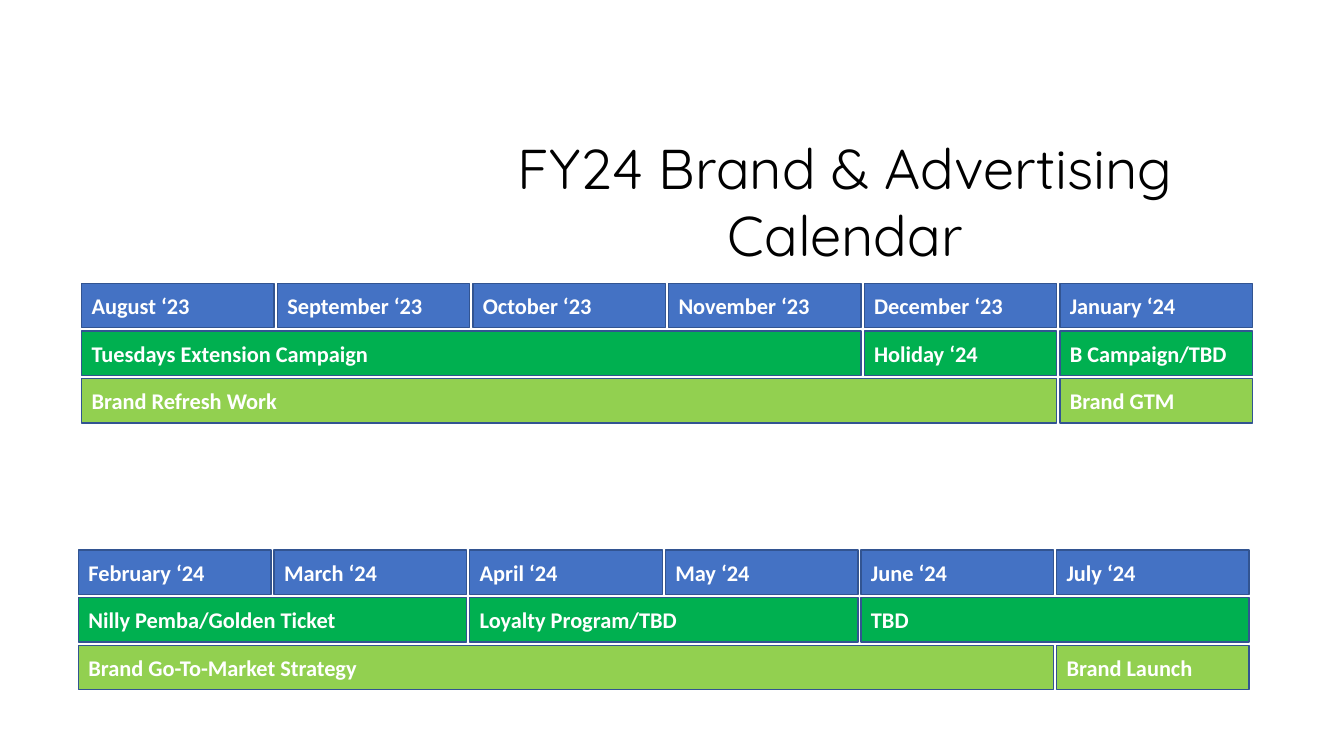
from pptx import Presentation
from pptx.dml.color import RGBColor
from pptx.enum.shapes import MSO_SHAPE
from pptx.enum.text import MSO_ANCHOR, MSO_AUTO_SIZE, PP_ALIGN
from pptx.util import Cm, Pt

RECTANGLE = MSO_SHAPE.RECTANGLE
TOP, MIDDLE = MSO_ANCHOR.TOP, MSO_ANCHOR.MIDDLE
LEFT, CENTER = PP_ALIGN.LEFT, PP_ALIGN.CENTER
NO_AUTO_SIZE = MSO_AUTO_SIZE.NONE

COLORS = {
    "month": "4472C4",
    "campaign": "00B050",
    "brand": "92D050",
    "outline": "325491",
    "light": "FFFFFF",
    "dark": "000000",
}
MONTH_PITCH, ROW_PITCH = 4.93, 1.2
GAP, BAR_HEIGHT = 0.08, 1.12

HALF_YEARS = [
    (2.06, 7.14, [
        ("month", [("August ‘23", 1), ("September ‘23", 1), ("October ‘23", 1),
                   ("November ‘23", 1), ("December ‘23", 1), ("January ‘24", 1)]),
        ("campaign", [("Tuesdays Extension Campaign", 4), ("Holiday ‘24", 1),
                      ("B Campaign/TBD", 1)]),
        ("brand", [("Brand Refresh Work", 5), ("Brand GTM", 1)]),
    ]),
    (1.98, 13.86, [
        ("month", [("February ‘24", 1), ("March ‘24", 1), ("April ‘24", 1),
                   ("May ‘24", 1), ("June ‘24", 1), ("July ‘24", 1)]),
        ("campaign", [("Nilly Pemba/Golden Ticket", 2), ("Loyalty Program/TBD", 2),
                      ("TBD", 2)]),
        ("brand", [("Brand Go-To-Market Strategy", 5), ("Brand Launch", 1)]),
    ]),
]


def write_text(shape, text, *, font, size, color, bold=False, align=LEFT, anchor=MIDDLE):
    frame = shape.text_frame
    frame.text = text
    frame.word_wrap = True
    frame.auto_size = NO_AUTO_SIZE
    frame.vertical_anchor = anchor
    paragraph = frame.paragraphs[0]
    paragraph.alignment = align
    paragraph.line_spacing = 1.0
    paragraph.font.name = font
    paragraph.font.size = Pt(size)
    paragraph.font.bold = bold
    paragraph.font.color.rgb = RGBColor.from_string(COLORS[color])


class CalendarSlide:
    """Draws the calendar elements on one slide in a shared style."""

    def __init__(self, presentation):
        self.title_font = "Quicksand"
        self.bar_font = "Calibri"
        self.slide = presentation.slides.add_slide(presentation.slide_layouts[5])

    def add_title(self, text):
        title = self.slide.shapes.title
        title.left, title.top = Cm(10.67), Cm(3.23)
        title.width, title.height = Cm(21.26), Cm(3.65)
        write_text(title, text, font=self.title_font, size=40, color="dark",
                   align=CENTER, anchor=TOP)

    def add_bar(self, text, left, top, months, fill):
        bar = self.slide.shapes.add_shape(
            RECTANGLE, Cm(left), Cm(top), Cm(months * MONTH_PITCH - GAP), Cm(BAR_HEIGHT))
        bar.shadow.inherit = False
        bar.fill.solid()
        bar.fill.fore_color.rgb = RGBColor.from_string(COLORS[fill])
        bar.line.color.rgb = RGBColor.from_string(COLORS["outline"])
        bar.line.width = Pt(1)
        write_text(bar, text, font=self.bar_font, size=16, color="light", bold=True)

    def add_half_year(self, left, top, rows):
        for row, (fill, bars) in enumerate(rows):
            first_month = 0
            for text, months in bars:
                self.add_bar(text, left + first_month * MONTH_PITCH,
                             top + row * ROW_PITCH, months, fill)
                first_month += months


def main():
    presentation = Presentation()
    presentation.slide_width, presentation.slide_height = Cm(33.87), Cm(19.05)
    calendar = CalendarSlide(presentation)
    calendar.add_title("FY24 Brand & Advertising Calendar")
    for left, top, rows in HALF_YEARS:
        calendar.add_half_year(left, top, rows)
    presentation.save("out.pptx")


if __name__ == "__main__":
    main()
